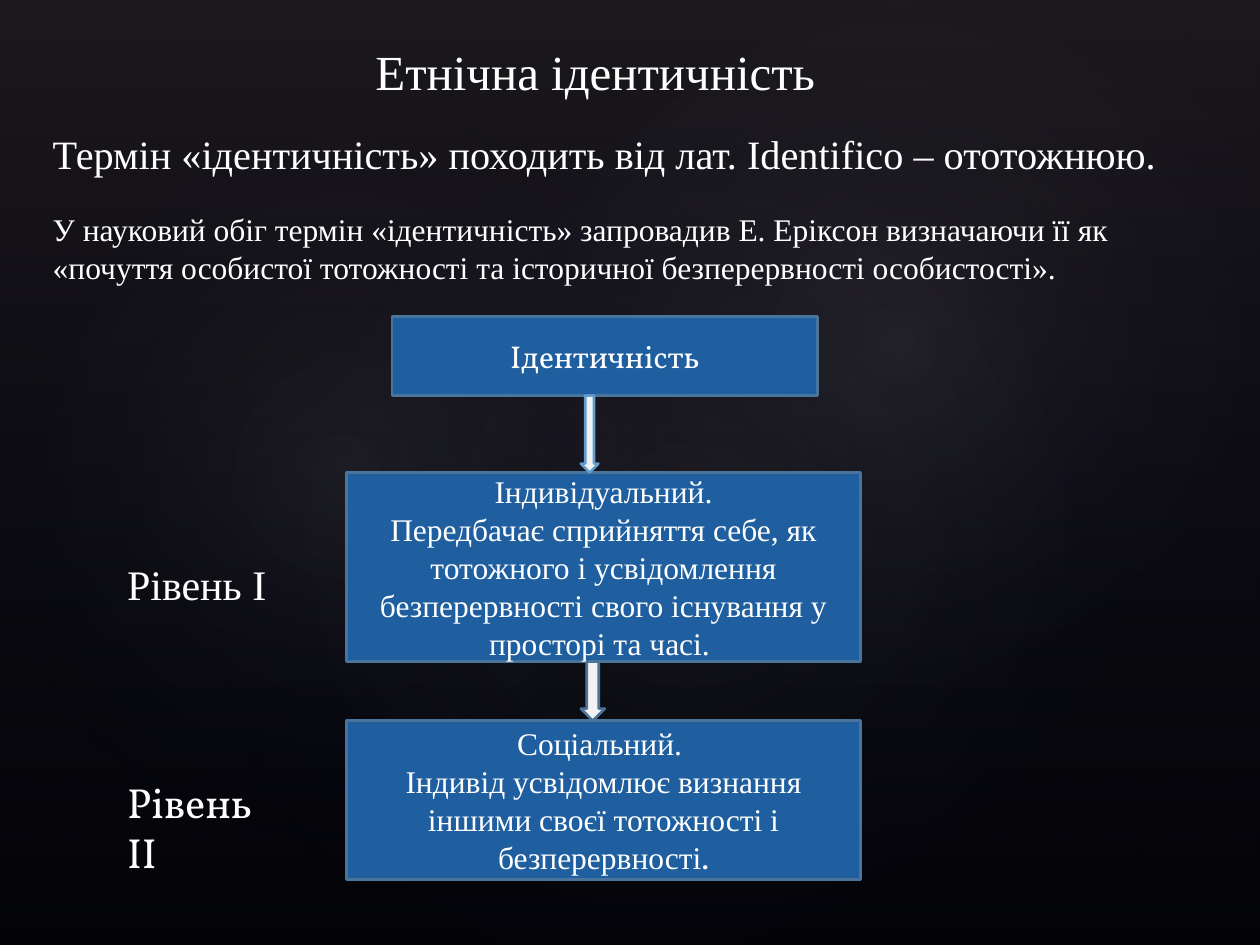
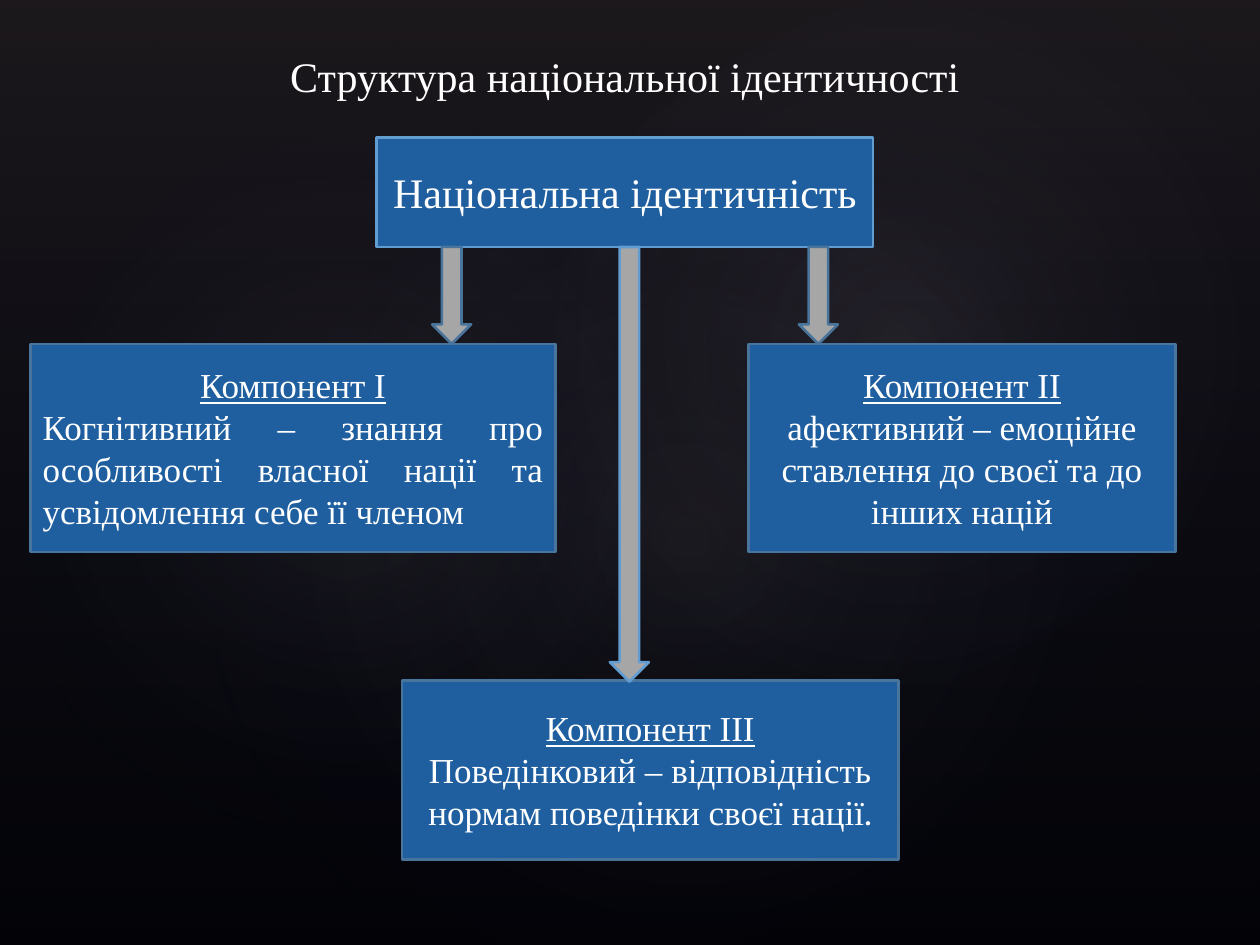
"""Builds two slides on ethnic and national identity as block diagrams."""
from lxml import etree
from pptx import Presentation
from pptx.dml.color import RGBColor
from pptx.enum import shapes, text
from pptx.oxml import ns
from pptx.util import Inches, Pt

BLACK = RGBColor(0x00, 0x00, 0x00)
WHITE = RGBColor(0xFF, 0xFF, 0xFF)
BLUE = RGBColor(0x1F, 0x5F, 0xA0)
EDGE = RGBColor(0x49, 0x74, 0x9B)
BRIGHT_EDGE = RGBColor(0x62, 0x9D, 0xD1)
PALE = RGBColor(0xF2, 0xF2, 0xF2)
GREY = RGBColor(0xA6, 0xA6, 0xA6)
NAVY = RGBColor(0x24, 0x28, 0x52)
HAZE = RGBColor(0x50, 0x46, 0x52)
GLOW = RGBColor(0xC4, 0xBC, 0xC6)

SERIF = "Times New Roman"
ACCENT = "Vollkorn"
RECTANGLE = shapes.MSO_SHAPE.RECTANGLE
ELLIPSE = shapes.MSO_SHAPE.OVAL
ARROW = shapes.MSO_SHAPE.DOWN_ARROW
LEFT = text.PP_ALIGN.LEFT
CENTER = text.PP_ALIGN.CENTER
JUSTIFY = text.PP_ALIGN.JUSTIFY


def write(frame, words, size=18, font=SERIF, align=CENTER, underline=False, same_line=False):
    para = frame.paragraphs[-1]
    if para.runs and not same_line:
        para = frame.add_paragraph()
    para.alignment = align
    span = para.add_run()
    span.text = words
    span.font.size = Pt(size)
    span.font.name = font
    span.font.underline = underline
    span.font.color.rgb = WHITE


def add_block(page, kind, place, fill=BLUE, edge=EDGE):
    block = page.shapes.add_shape(kind, *map(Inches, place))
    block.shadow.inherit = False
    block.fill.solid()
    block.fill.fore_color.rgb = fill
    block.line.color.rgb = edge
    block.line.width = Pt(1.5)
    block.text_frame.word_wrap = True
    block.text_frame.vertical_anchor = text.MSO_ANCHOR.MIDDLE
    return block


deck = Presentation()
deck.slide_width, deck.slide_height = Inches(10), Inches(7.5)
master = deck.slide_master
master.background.fill.solid()
master.background.fill.fore_color.rgb = BLACK
identity, structure = [deck.slides.add_slide(deck.slide_layouts[5]) for _ in range(2)]

backdrop = [
    (RECTANGLE, (0, 0, 10, 7.5), 0, [(0, HAZE, 36), (100, NAVY, 10)]),
    (ELLIPSE, (1.5, 1.14, 7.92, 6.24), 328.7, [(0, GLOW, 7), (58, NAVY, 0)]),
    (ELLIPSE, (-0.3, 1.28, 6.06, 4.9), 294.3, [(0, GLOW, 8), (58, NAVY, 0)]),
    (ELLIPSE, (3.58, 0.13, 7.09, 5.2), 328.7, [(0, GLOW, 8), (58, NAVY, 0)]),
]
for order, (kind, place, rotation, stops) in enumerate(backdrop):
    layer = add_block(identity, kind, place)
    layer.line.fill.background()
    layer.rotation = rotation
    gradient = etree.Element(ns.qn("a:gradFill"), rotWithShape="1")
    stop_list = etree.SubElement(gradient, ns.qn("a:gsLst"))
    for position, color, opacity in stops:
        stop = etree.SubElement(stop_list, ns.qn("a:gs"), pos=str(position * 1000))
        tint = etree.SubElement(stop, ns.qn("a:srgbClr"), val=str(color))
        etree.SubElement(tint, ns.qn("a:alpha"), val=str(opacity * 1000))
    if kind == ELLIPSE:
        circle = etree.SubElement(gradient, ns.qn("a:path"), attrib={"path": "circle"})
        etree.SubElement(circle, ns.qn("a:fillToRect"), l="50000", t="50000", r="50000", b="50000")
    else:
        etree.SubElement(gradient, ns.qn("a:lin"), ang="5400000", scaled="0")
    solid = layer.element.spPr.find(ns.qn("a:solidFill"))
    layer.element.spPr.replace(solid, gradient)
    master.shapes.element.insert(2 + order, layer.element)

titles = [
    (identity, "Етнічна ідентичність", (2.88, 0.28, 3.73, 0.57), 28, LEFT, False),
    (structure, "Структура національної ідентичності", (0.43, 0.35, 9.06, 0.5), 24, CENTER, True),
]
for page, words, place, size, align, wrap in titles:
    title = page.shapes.title
    title.left, title.top, title.width, title.height = map(Inches, place)
    title.text_frame.word_wrap = wrap
    title.text_frame.auto_size = text.MSO_AUTO_SIZE.NONE
    title.text_frame.vertical_anchor = text.MSO_ANCHOR.TOP
    write(title.text_frame, words, size=size, align=align)

notes = [
    ("Термін «ідентичність» походить від лат. Identifico – ототожнюю.",
     (0.32, 0.98, 9.21, 0.49), 23, SERIF, JUSTIFY, True),
    ("У науковий обіг термін «ідентичність» запровадив Е. Еріксон визначаючи її як "
     "«почуття особистої тотожності та історичної безперервності особистості».",
     (0.32, 1.62, 9.21, 0.71), 18, SERIF, LEFT, True),
    ("Рівень І", (0.91, 4.38, 1.32, 0.5), 24, SERIF, LEFT, False),
    ("Рівень ІІ", (0.91, 6.11, 1.49, 0.5), 24, ACCENT, LEFT, False),
]
for words, place, size, font, align, wrap in notes:
    box = identity.shapes.add_textbox(*map(Inches, place))
    box.text_frame.word_wrap = wrap
    write(box.text_frame, words, size=size, font=font, align=align)

root = add_block(identity, RECTANGLE, (3.11, 2.51, 3.38, 0.63))
write(root.text_frame, "Ідентичність", font=ACCENT)

levels = [
    ("Індивідуальний.",
     "Передбачає сприйняття себе, як тотожного і усвідомлення безперервності "
     "свого існування у просторі та часі. ", "", 3.75, 1.5),
    ("Соціальний. ",
     "Індивід усвідомлює визнання іншими своєї тотожності і безперервності", ".", 5.72, 1.26),
]
for heading, words, ending, top, height in levels:
    level = add_block(identity, RECTANGLE, (2.75, top, 4.08, height))
    write(level.text_frame, heading)
    write(level.text_frame, words)
    if ending:
        write(level.text_frame, ending, font=ACCENT, same_line=True)

nation = add_block(structure, RECTANGLE, (2.99, 1.09, 3.94, 0.87), edge=BRIGHT_EDGE)
write(nation.text_frame, "Національна ідентичність", size=24)

components = [
    ("Компонент І",
     "Когнітивний – знання про особливості власної нації та усвідомлення себе її членом",
     "", (0.24, 2.73, 4.17, 1.65), JUSTIFY),
    ("Компонент ІІ",
     "афективний – емоційне ставлення до своєї та до інших націй",
     "", (5.94, 2.73, 3.39, 1.65), CENTER),
    ("Компонент ІІІ",
     "Поведінковий – відповідність нормам поведінки своєї нації",
     ".", (3.19, 5.4, 3.94, 1.42), CENTER),
]
for heading, words, ending, place, align in components:
    component = add_block(structure, RECTANGLE, place)
    write(component.text_frame, heading, size=20, underline=True)
    write(component.text_frame, words, size=20, align=align)
    if ending:
        write(component.text_frame, ending, font=ACCENT, align=align, same_line=True)

arrows = [
    (identity, (4.61, 3.14, 0.14, 0.61), PALE, BRIGHT_EDGE),
    (identity, (4.61, 5.25, 0.19, 0.47), PALE, EDGE),
    (structure, (3.43, 1.96, 0.31, 0.77), GREY, EDGE),
    (structure, (6.34, 1.96, 0.31, 0.77), GREY, EDGE),
    (structure, (4.84, 1.96, 0.31, 3.45), GREY, BRIGHT_EDGE),
]
for page, place, fill, edge in arrows:
    add_block(page, ARROW, place, fill, edge)

deck.save("out.pptx")
